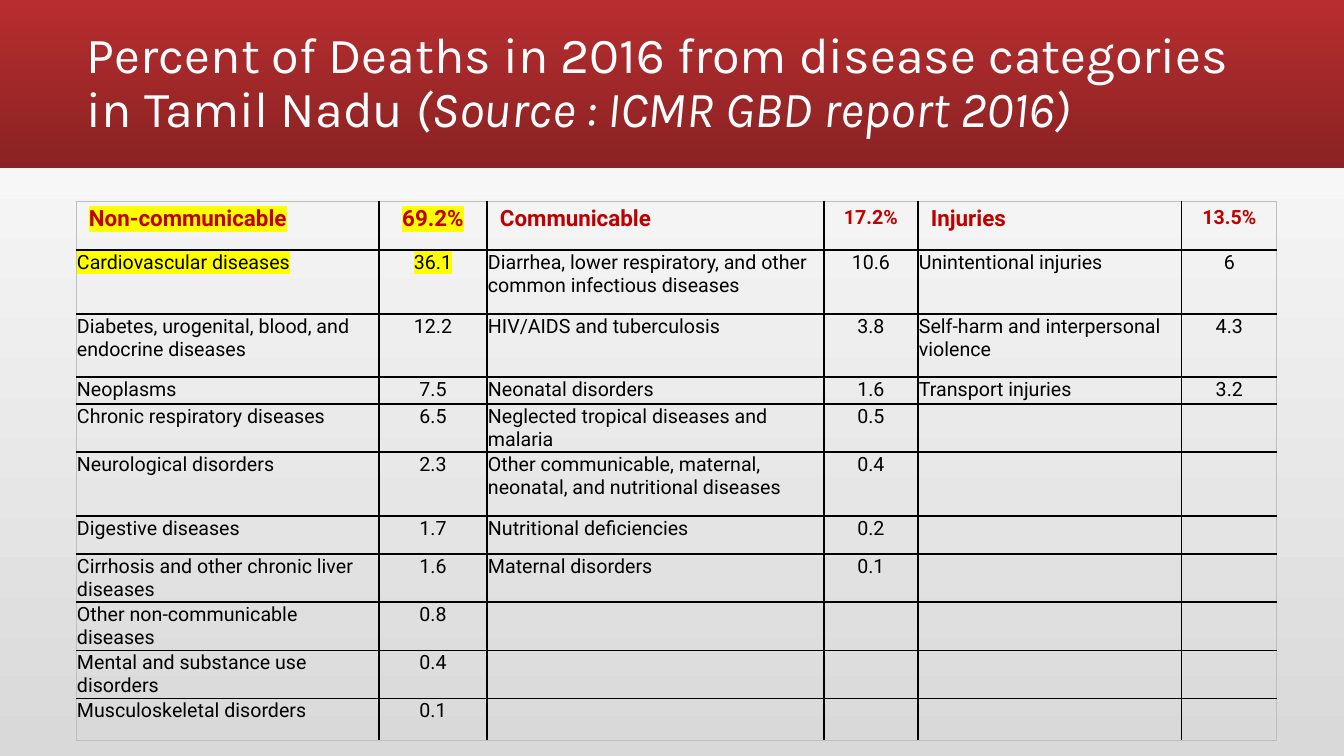
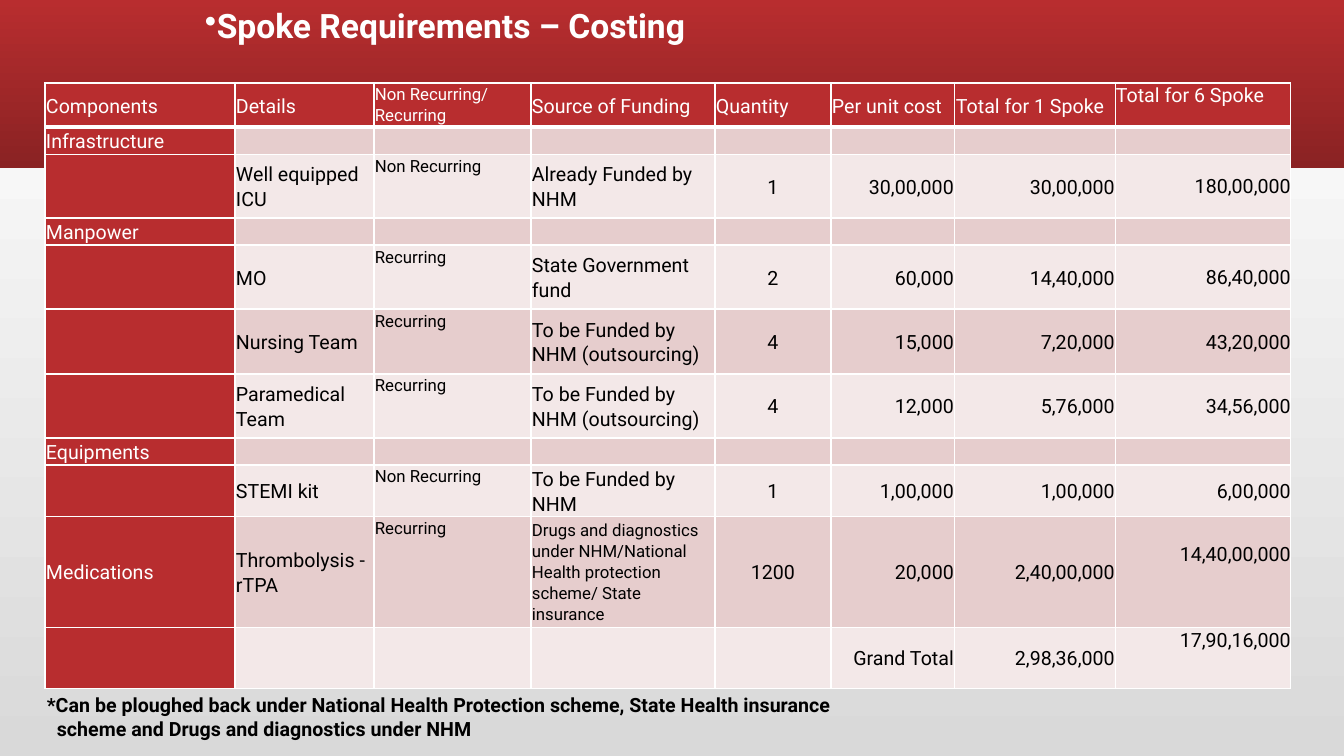
from lxml import etree
from pptx import Presentation
from pptx.dml.color import RGBColor
from pptx.enum.shapes import MSO_SHAPE
from pptx.enum.text import MSO_ANCHOR, PP_ALIGN
from pptx.oxml.ns import qn
from pptx.util import Emu, Pt

# Shared look
W, H, BAND_H = 1344, 756, 168
RED, DARK_RED, HEAD_RED = "B82D2F", "8A2223", "C00000"
WHITE, BLACK, GREY, YELLOW = "FFFFFF", "000000", "BFBFBF", "FFFF00"
PINK, PALE, BACK = "E6CDCD", "F3E8E8", "D9D9D9"
LEFT, CENTER, RIGHT = PP_ALIGN.LEFT, PP_ALIGN.CENTER, PP_ALIGN.RIGHT
TOP, MIDDLE = MSO_ANCHOR.TOP, MSO_ANCHOR.MIDDLE
TITLE = {"name": "Karla", "size": Pt(36)}
BODY = {"name": "Roboto", "size": Pt(14)}
SMALL = BODY | {"size": Pt(12)}
BOLD = BODY | {"bold": True}

# Slide 1: deaths by disease category
DEATHS_TITLE = [
    ("Percent of Deaths in 2016 from disease categories in Tamil Nadu ", TITLE),
    ("(Source : ICMR GBD report 2016)", TITLE | {"italic": True}),
]
DEATHS_COLS = [303, 108, 337, 94, 264, 95]
DEATHS_ROWS = [49, 64, 63, 27, 47, 64, 38, 47, 47, 48, 42]
DEATHS = [
    [
        ("Non-communicable", "69.2%"),
        ("Cardiovascular diseases", "36.1"),
        ("Diabetes, urogenital, blood, and endocrine diseases", "12.2"),
        ("Neoplasms", "7.5"),
        ("Chronic respiratory diseases", "6.5"),
        ("Neurological disorders", "2.3"),
        ("Digestive diseases", "1.7"),
        ("Cirrhosis and other chronic liver diseases", "1.6"),
        ("Other non-communicable diseases", "0.8"),
        ("Mental and substance use disorders", "0.4"),
        ("Musculoskeletal disorders", "0.1"),
    ],
    [
        ("Communicable", "17.2%"),
        ("Diarrhea, lower respiratory, and other common infectious diseases", "10.6"),
        ("HIV/AIDS and tuberculosis", "3.8"),
        ("Neonatal disorders", "1.6"),
        ("Neglected tropical diseases and malaria", "0.5"),
        ("Other communicable, maternal, neonatal, and nutritional diseases", "0.4"),
        ("Nutritional deficiencies", "0.2"),
        ("Maternal disorders", "0.1"),
    ],
    [
        ("Injuries", "13.5%"),
        ("Unintentional injuries", "6"),
        ("Self-harm and interpersonal violence", "4.3"),
        ("Transport injuries", "3.2"),
    ],
]

# Slide 2: costing
COST_TITLE = "Spoke Requirements – Costing"
COST_COLS = [190, 139, 157, 184, 116, 124, 161, 175]
COST_ROWS = [43, 27, 64, 27, 64, 65, 64, 27, 50, 111, 61]
COSTS = [
    ("Components", "Details", "Non Recurring/ Recurring", "Source of Funding",
     "Quantity", "Per unit cost", "Total for 1 Spoke", "Total for 6 Spoke"),
    ("Infrastructure",),
    ("", "Well equipped ICU", "Non Recurring", "Already Funded by NHM",
     "1", "30,00,000", "30,00,000", "180,00,000"),
    ("Manpower",),
    ("", "MO", "Recurring", "State Government fund",
     "2", "60,000", "14,40,000", "86,40,000"),
    ("", "Nursing Team", "Recurring", "To be Funded by NHM (outsourcing)",
     "4", "15,000", "7,20,000", "43,20,000"),
    ("", "Paramedical Team", "Recurring", "To be Funded by NHM (outsourcing)",
     "4", "12,000", "5,76,000", "34,56,000"),
    ("Equipments",),
    ("", "STEMI kit", "Non Recurring", "To be Funded by NHM",
     "1", "1,00,000", "1,00,000", "6,00,000"),
    ("Medications", "Thrombolysis - rTPA", "Recurring",
     "Drugs and diagnostics under NHM/National Health protection scheme/ State insurance",
     "1200", "20,000", "2,40,00,000", "14,40,00,000"),
    ("", "", "", "", "", "Grand Total", "2,98,36,000", "17,90,16,000"),
]
COST_ALIGN = [LEFT] * 4 + [CENTER] + [RIGHT] * 3
FOOTNOTE = [
    "*Can be ploughed back under National Health Protection scheme, State Health insurance",
    "scheme and Drugs and diagnostics under NHM",
]


def px(n):
    return Emu(round(n * 914400 / 100.8))


def rgb(value):
    return RGBColor.from_string(value)


def apply(obj, values):
    for key, value in values.items():
        setattr(obj, key, value)


def gradient(fill, start, end, angle):
    fill.gradient()
    fill.gradient_angle = angle
    for stop, color in zip(fill.gradient_stops, (start, end)):
        stop.color.rgb = rgb(color)


def add_run(p, text, font, color, highlight=None):
    r = p.add_run()
    r.text = text
    apply(r.font, font)
    r.font.color.rgb = rgb(color)
    if highlight:
        mark = etree.Element(qn("a:highlight"))
        etree.SubElement(mark, qn("a:srgbClr"), val=highlight)
        r.font._element.find(qn("a:solidFill")).addnext(mark)


def new_slide(prs):
    s = prs.slides.add_slide(prs.slide_layouts[6])
    gradient(s.background.fill, BACK, WHITE, 90)
    band = s.shapes.add_shape(MSO_SHAPE.RECTANGLE, 0, 0, px(W), px(BAND_H))
    band.shadow.inherit = False
    band.line.fill.background()
    gradient(band.fill, RED, DARK_RED, 270)
    return s


def add_text(s, x, y, w, h, anchor=TOP):
    tf = s.shapes.add_textbox(px(x), px(y), px(w), px(h)).text_frame
    apply(tf, {"word_wrap": True, "vertical_anchor": anchor})
    return tf


def add_table(s, x, y, cols, rows):
    table = s.shapes.add_table(len(rows), len(cols), px(x), px(y),
                               px(sum(cols)), px(sum(rows))).table
    apply(table, {"first_row": False, "horz_banding": False})
    for col, width in zip(table.columns, cols):
        col.width = px(width)
    for row, height in zip(table.rows, rows):
        row.height = px(height)
    return table


def fill_cell(cell, text, font, color, align=LEFT, anchor=TOP, fill=None,
              margins=(1, 1, 1, 0), highlight=None, spacing=None):
    sides = ("margin_left", "margin_top", "margin_right", "margin_bottom")
    apply(cell, dict(zip(sides, map(px, margins))) | {"vertical_anchor": anchor})
    if fill:
        cell.fill.solid()
        cell.fill.fore_color.rgb = rgb(fill)
    else:
        cell.fill.background()
    p = cell.text_frame.paragraphs[0]
    apply(p, {"alignment": align} | (spacing or {}))
    if text:
        add_run(p, text, font, color, highlight)
    else:
        etree.SubElement(p._p, qn("a:endParaRPr"), sz=str(round(font["size"].pt * 100)))


def set_borders(cell, borders):
    """Borders are (colour, points) in the order left, right, top, bottom."""
    tc_pr = cell._tc.get_or_add_tcPr()
    for i, (side, (color, width)) in enumerate(zip("LRTB", borders)):
        ln = etree.Element(qn(f"a:ln{side}"), w=str(Pt(width)))
        solid = etree.SubElement(ln, qn("a:solidFill"))
        etree.SubElement(solid, qn("a:srgbClr"), val=color)
        tc_pr.insert(i, ln)


def deaths_slide(prs):
    s = new_slide(prs)
    p = add_text(s, 77, 11, 1200, 146, MIDDLE).paragraphs[0]
    p.line_spacing = 0.9
    for text, font in DEATHS_TITLE:
        add_run(p, text, font, WHITE)

    table = add_table(s, 76, 201, DEATHS_COLS, DEATHS_ROWS)
    last_row, last_col = len(DEATHS_ROWS) - 1, len(DEATHS_COLS) - 1
    for i in range(last_row + 1):
        for j in range(last_col + 1):
            group, part = DEATHS[j // 2], j % 2
            text = group[i][part] if i < len(group) else ""
            look = {"font": BODY, "color": BLACK}
            if i == 0:
                size = 14 if part and j > 1 else 16
                look = {"font": BOLD | {"size": Pt(size)}, "color": HEAD_RED,
                        "margins": (13, 5, 13, 5)}
            if i < 2 and j < 2:
                look["highlight"] = YELLOW
            cell = table.cell(i, j)
            fill_cell(cell, text, align=CENTER if part else LEFT, **look)
            outer = (j == 0, j == last_col, i == 0, i == last_row)
            set_borders(cell, [(GREY, 0.75) if edge else (BLACK, 1) for edge in outer])


def costing_slide(prs):
    s = new_slide(prs)
    table = add_table(s, 45, 83, COST_COLS, COST_ROWS)
    last_col = len(COST_COLS) - 1
    for i, row in enumerate(COSTS):
        for j, align in enumerate(COST_ALIGN):
            text = row[j] if j < len(row) else ""
            head, total = i == 0, j == last_col
            red = head or j == 0
            raised = total and i >= len(COSTS) - 2
            margins = (0, 0, 0, 35 if raised else 0) if total else (1, 1, 1, 0)
            cell = table.cell(i, j)
            fill_cell(
                cell, text,
                font=SMALL if j == 2 or len(text) > 40 else BODY,
                color=WHITE if red else BLACK,
                align=LEFT if head else align,
                anchor=TOP if j == 2 or (head and total) else MIDDLE,
                fill=RED if red else PINK if i % 2 else PALE,
                margins=margins,
                spacing={"line_spacing": 1.07, "space_after": Pt(8)})
            widths = (1, 1, 3 if i == 1 else 1, 3 if head else 1)
            set_borders(cell, [(WHITE, w) for w in widths])

    # Footnote, second line indented
    tf = add_text(s, 37, 688, 1100, 60)
    for i, line in enumerate(FOOTNOTE):
        p = tf.add_paragraph() if i else tf.paragraphs[0]
        p._p.get_or_add_pPr().set("marL", str(px(10 * i)))
        add_run(p, line, BOLD, BLACK)

    # Bulleted heading
    p = add_text(s, 195, 0, 652, 50).paragraphs[0]
    etree.SubElement(p._p.get_or_add_pPr(), qn("a:buChar"), char="•")
    add_run(p, COST_TITLE, BOLD | {"size": Pt(24)}, WHITE)


def main():
    prs = Presentation()
    apply(prs, {"slide_width": px(W), "slide_height": px(H)})
    deaths_slide(prs)
    costing_slide(prs)
    prs.save("out.pptx")


if __name__ == "__main__":
    main()
